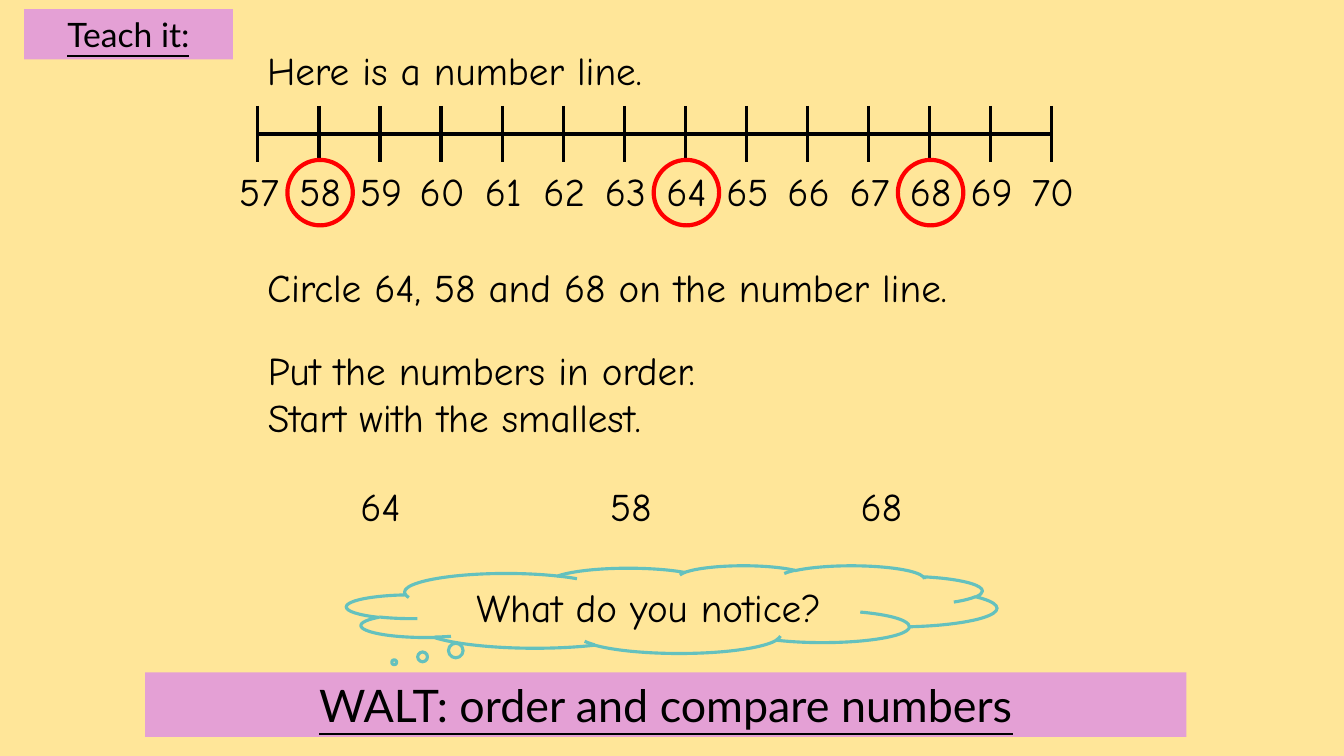
from pptx import Presentation
from pptx.dml.color import RGBColor
from pptx.enum.shapes import MSO_CONNECTOR as Connector, MSO_SHAPE as Shape
from pptx.enum.text import MSO_ANCHOR as Anchor, MSO_AUTO_SIZE as AutoSize, PP_ALIGN as Align
from pptx.oxml.ns import qn
from pptx.util import Cm, Pt
from lxml import etree

COLOURS = {"page": "FFE699", "ink": "000000", "ring": "FF0000",
           "cloud": "64C1BE", "banner": "E4A0D5"}
BODY_FONT, BANNER_FONT = "Comic Neue", "Lato"
LINE_HEIGHT = 1.45  # height of a one-line box, in cm
NUMBER_WIDTH = 1.9


def colour(name):
    return RGBColor.from_string(COLOURS[name])


def write(frame, text, font=BODY_FONT, size=28, align=Align.LEFT,
          anchor=Anchor.TOP, underline=False):
    frame.text = text
    frame.word_wrap = True
    frame.vertical_anchor = anchor
    for paragraph in frame.paragraphs:
        paragraph.alignment = align
        for run in paragraph.runs:
            run.font.name = font
            run.font.size = Pt(size)
            run.font.underline = underline
            run.font.color.rgb = colour("ink")


def add_words(slide, left, top, width, height, text, align=Align.LEFT):
    box = slide.shapes.add_textbox(Cm(left), Cm(top), Cm(width), Cm(height))
    write(box.text_frame, text, align=align)
    box.text_frame.auto_size = AutoSize.SHAPE_TO_FIT_TEXT


def add_number(slide, centre, top, number):
    add_words(slide, centre - NUMBER_WIDTH / 2, top, NUMBER_WIDTH, LINE_HEIGHT,
              str(number), Align.CENTER)


def add_line(slide, x1, y1, x2, y2, weight):
    line = slide.shapes.add_connector(Connector.STRAIGHT, Cm(x1), Cm(y1), Cm(x2), Cm(y2))
    line.line.color.rgb = colour("ink")
    line.line.width = Pt(weight)
    etree.SubElement(line._element.spPr, qn("a:effectLst"))


def add_outline(slide, kind, left, top, width, height, line_colour, weight):
    shape = slide.shapes.add_shape(kind, Cm(left), Cm(top), Cm(width), Cm(height))
    shape.shadow.inherit = False
    shape.fill.background()
    shape.line.color.rgb = colour(line_colour)
    shape.line.width = Pt(weight)
    return shape


def add_number_line(slide, left, top, width, height, first, last, circled):
    """Axis with ticks, a number under each tick, and rings round some."""
    step = width / (last - first)
    ring = 1.65
    middle = top + height / 2
    add_line(slide, left, middle, left + width, middle, 3)
    for number in range(first, last + 1):
        x = left + (number - first) * step
        add_line(slide, x, top, x, top + height, 2.25)
        add_number(slide, x + 0.03, top + height, number)
        if number in circled:
            add_outline(slide, Shape.OVAL, x - ring / 2 + 0.03, top + height - 0.06,
                        ring, ring, "ring", 3)


def add_choices(slide, left, top, width, numbers):
    """Numbers to be ordered, spread evenly across the width."""
    gap = width / (len(numbers) - 1)
    for index, number in enumerate(numbers):
        add_number(slide, left + index * gap, top, number)


def add_thought(slide, left, top, width, height, text):
    cloud = add_outline(slide, Shape.CLOUD_CALLOUT, left, top, width, height, "cloud", 2.25)
    cloud.adjustments[0], cloud.adjustments[1] = -0.427, 0.604
    write(cloud.text_frame, text, align=Align.CENTER, anchor=Anchor.MIDDLE)


def fill_banner(banner, text, size):
    banner.fill.solid()
    banner.fill.fore_color.rgb = colour("banner")
    banner.line.fill.background()
    write(banner.text_frame, text, BANNER_FONT, size, Align.CENTER, Anchor.MIDDLE, True)


def add_stage_label(slide, left, top, width, height, text):
    label = slide.shapes.add_shape(Shape.RECTANGLE, Cm(left), Cm(top), Cm(width), Cm(height))
    label.shadow.inherit = False
    fill_banner(label, text, 24)


def place_title(slide, left, top, width, height, text):
    title = slide.shapes.title
    title.left, title.top, title.width, title.height = Cm(left), Cm(top), Cm(width), Cm(height)
    fill_banner(title, text, 32)
    title.text_frame.auto_size = AutoSize.NONE


def build_lesson_slide(deck):
    slide = deck.slides.add_slide(deck.slide_layouts[5])
    slide.background.fill.solid()
    slide.background.fill.fore_color.rgb = colour("page")
    numbers = (64, 58, 68)

    # Number line
    add_words(slide, 6.48, 1.04, 20, LINE_HEIGHT, "Here is a number line.")
    add_number_line(slide, 6.5, 2.67, 20, 1.42, 57, 70, numbers)

    # Tasks
    add_words(slide, 6.48, 6.5, 20, LINE_HEIGHT, "Circle 64, 58 and 68 on the number line.")
    add_words(slide, 6.5, 8.61, 20.4, 2.64,
              "Put the numbers in order.\nStart with the smallest.")
    add_choices(slide, 9.59, 12.04, 12.62, numbers)

    # Prompt and banners
    add_thought(slide, 8.74, 14.25, 16.38, 2.21, "What do you notice?")
    place_title(slide, 3.66, 16.94, 26.24, 1.63, "WALT: order and compare numbers")
    add_stage_label(slide, 0.61, 0.23, 5.26, 1.27, "Teach it:")


def main():
    deck = Presentation()
    deck.slide_width, deck.slide_height = Cm(33.87), Cm(19.05)
    build_lesson_slide(deck)
    deck.save("out.pptx")


if __name__ == "__main__":
    main()
